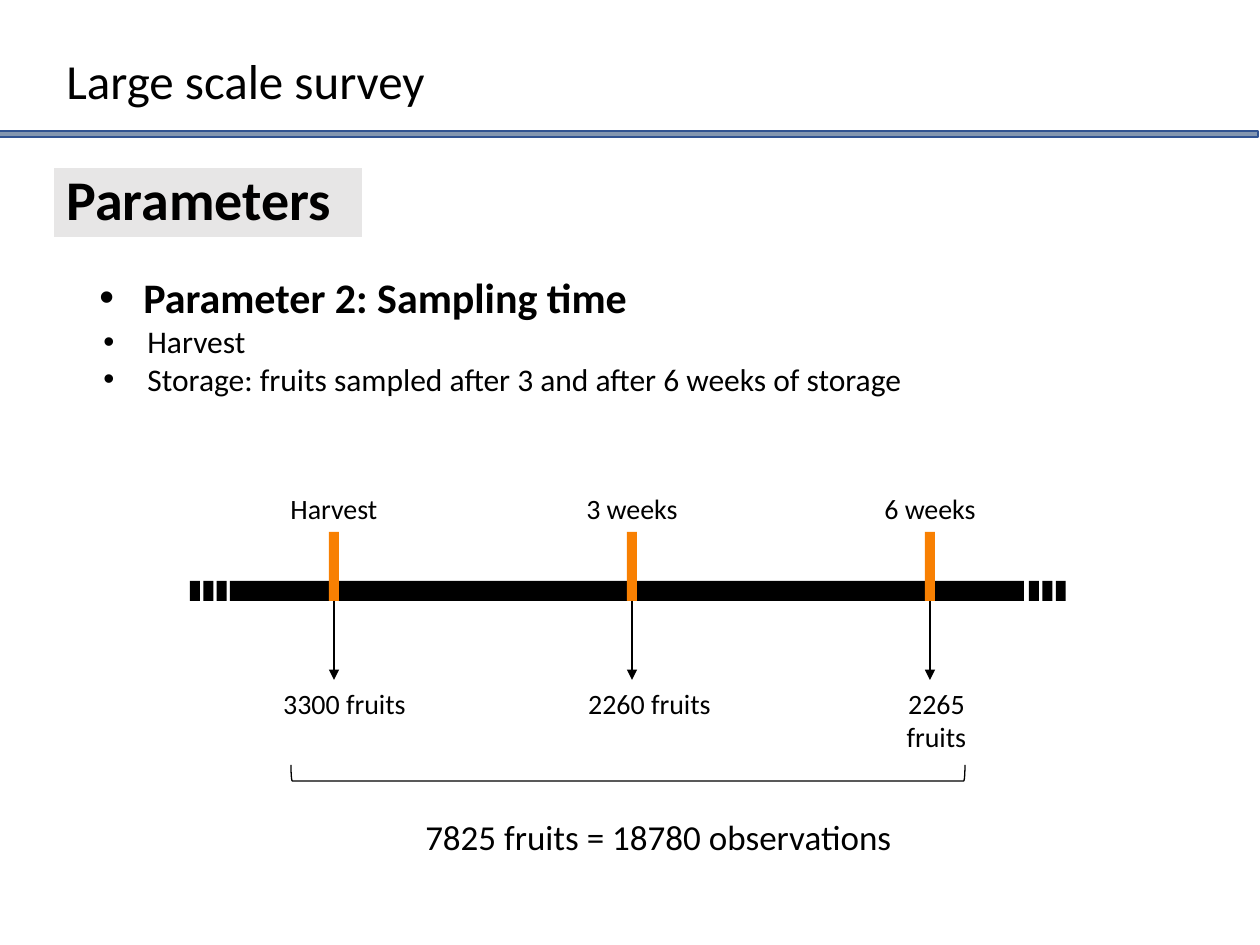
from dataclasses import dataclass

from lxml import etree
from pptx import Presentation
from pptx.dml.color import RGBColor
from pptx.enum import shapes, text
from pptx.oxml.ns import qn
from pptx.util import Pt

EMU_PER_PX = 914400 / 126


@dataclass(frozen=True)
class Theme:
    font: str = "Calibri"
    ink: str = "000000"
    accent: str = "F88002"
    panel: str = "E7E6E6"
    band: str = "8497B0"
    band_edge: str = "325491"
    heading: int = 32
    title: int = 28
    lead: int = 24
    total: int = 20
    body: int = 18
    label: int = 16
    hairline: float = 0.75


THEME = Theme()
CENTER = text.PP_ALIGN.CENTER
LEFT = text.PP_ALIGN.LEFT


def px(length):
    return round(length * EMU_PER_PX)


def frame(left, top, width, height):
    return [px(length) for length in (left, top, width, height)]


def apply(target, values):
    for name, value in values.items():
        setattr(target, name, value)


def add_block(page, area, fill=None, edge=None, weight=1,
              kind=shapes.MSO_SHAPE.RECTANGLE):
    block = page.shapes.add_shape(kind, *frame(*area))
    block.shadow.inherit = False
    if fill:
        block.fill.solid()
        block.fill.fore_color.rgb = RGBColor.from_string(fill)
    else:
        block.fill.background()
    if edge:
        block.line.color.rgb = RGBColor.from_string(edge)
        block.line.width = Pt(weight)
    else:
        block.line.fill.background()
    return block


def write(para, words, size, bold=False, align=LEFT):
    para.alignment = align
    span = para.add_run()
    span.text = words
    apply(span.font, {"name": THEME.font, "size": Pt(size), "bold": bold})
    span.font.color.rgb = RGBColor.from_string(THEME.ink)


def add_text(page, area, words, size, align=CENTER, **settings):
    box = page.shapes.add_textbox(*frame(*area))
    values = {"word_wrap": True, "auto_size": text.MSO_AUTO_SIZE.SHAPE_TO_FIT_TEXT}
    apply(box.text_frame, values | settings)
    write(box.text_frame.paragraphs[0], words, size, align=align)


def add_bullets(page, area, items):
    box = page.shapes.add_textbox(*frame(*area))
    apply(box.text_frame, {"word_wrap": True, "margin_top": px(9)})
    for index, (words, size, bold, indent) in enumerate(items):
        para = box.text_frame.add_paragraph() if index else box.text_frame.paragraphs[0]
        write(para, words, size, bold)
        props = para._p.get_or_add_pPr()
        props.set("marL", str(px(indent)))
        props.set("indent", str(px(-44)))
        etree.SubElement(props, qn("a:buFont")).set("typeface", "Arial")
        etree.SubElement(props, qn("a:buChar")).set("char", "•")


def add_arrow(page, x, top, bottom):
    arrow = page.shapes.add_connector(
        shapes.MSO_CONNECTOR.STRAIGHT, px(x), px(top), px(x), px(bottom))
    arrow.line.color.rgb = RGBColor.from_string(THEME.ink)
    arrow.line.width = Pt(THEME.hairline)
    etree.SubElement(arrow.line._get_or_add_ln(), qn("a:tailEnd")).set("type", "triangle")
    etree.SubElement(arrow._element.spPr, qn("a:effectLst"))


def add_header(page):
    add_text(page, (54, 52, 625, 64), "Large scale survey", THEME.title, LEFT,
             auto_size=text.MSO_AUTO_SIZE.NONE,
             vertical_anchor=text.MSO_ANCHOR.BOTTOM)
    add_block(page, (-2, 131, 1260, 6), THEME.band, THEME.band_edge)
    heading = add_block(page, (54, 168, 308, 69), THEME.panel)
    heading.text_frame.vertical_anchor = text.MSO_ANCHOR.MIDDLE
    para = heading.text_frame.paragraphs[0]
    para.line_spacing = 0.9
    write(para, "Parameters", THEME.heading, True)


def add_timeline(page):
    first, pitch, tick, top, height = 329, 298, 10, 581, 20
    end = first + 2 * pitch
    add_block(page, (first - 99, top, end - first + 198, height), THEME.ink)
    for start in (190, 1029):
        for step in range(3):
            add_block(page, (start + step * 13.4, top, tick, height), THEME.ink)
    stages = [("Harvest", 128, "3300 fruits", 149),
              ("3 weeks", 176, "2260 fruits", 163),
              ("6 weeks", 176, "2265 fruits", 141)]
    for index, (name, name_width, count, count_width) in enumerate(stages):
        left = first + index * pitch
        center = left + tick / 2
        add_block(page, (left, 532, tick, 69), THEME.accent)
        add_text(page, (center - name_width / 2, 485, name_width, 47), name, THEME.label)
        add_arrow(page, center, 601, 680)
        add_text(page, (left - 59, 680, count_width, 47), count, THEME.label)


def add_total(page):
    bracket = add_block(page, (620, 436, 16, 674), edge=THEME.ink,
                        weight=THEME.hairline, kind=shapes.MSO_SHAPE.LEFT_BRACKET)
    bracket.rotation = 270
    add_text(page, (378, 809, 561, 55), "7825 fruits = 18780 observations", THEME.total)


def main():
    deck = Presentation()
    apply(deck, {"slide_width": px(1260), "slide_height": px(945)})
    page = deck.slides.add_slide(deck.slide_layouts[6])
    add_bullets(page, (74, 263, 1060, 539), [
        ("Parameter 2: Sampling time", THEME.lead, True, 57),
        ("Harvest", THEME.body, False, 61),
        ("Storage: fruits sampled after 3 and after 6 weeks of storage",
         THEME.body, False, 61),
    ])
    add_timeline(page)
    add_total(page)
    add_header(page)
    deck.save("out.pptx")


if __name__ == "__main__":
    main()
